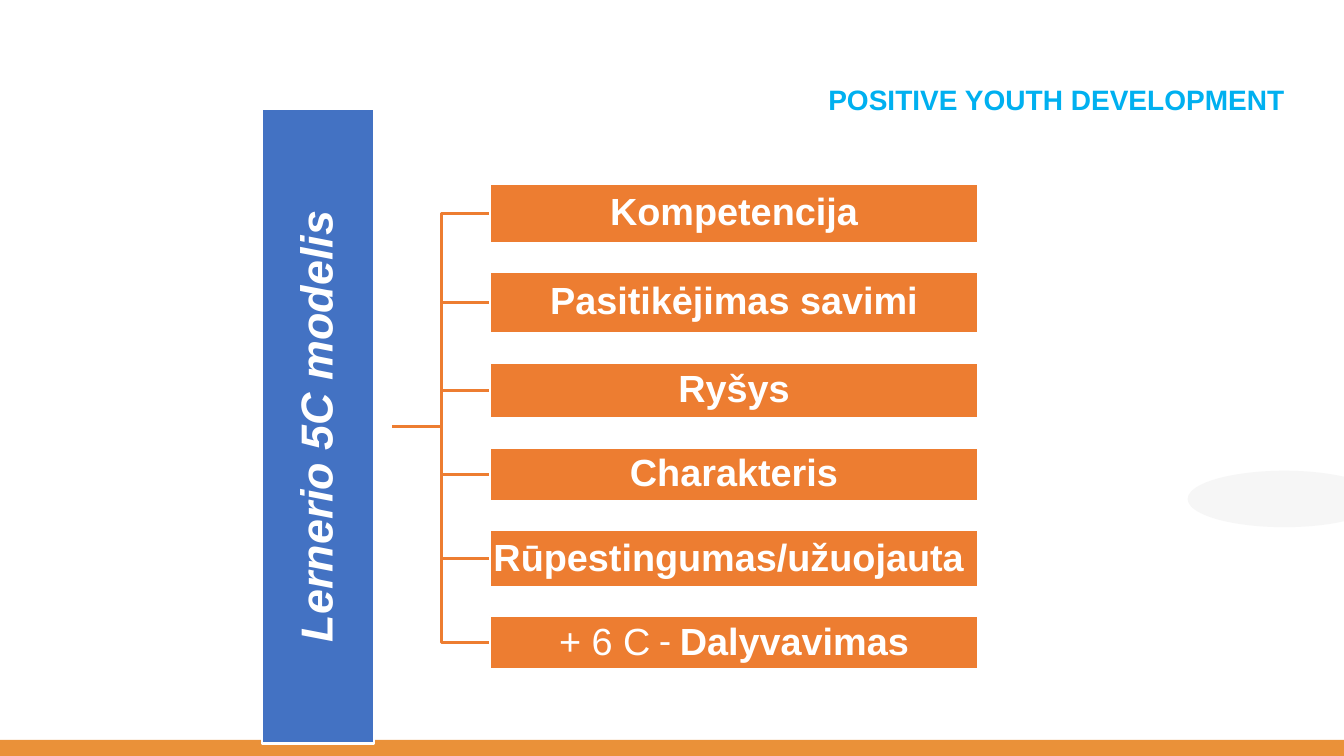
from lxml.etree import SubElement
from pptx import Presentation
from pptx.dml.color import RGBColor
from pptx.enum.shapes import MSO_CONNECTOR, MSO_SHAPE
from pptx.enum.text import MSO_ANCHOR, MSO_AUTO_SIZE, PP_ALIGN
from pptx.oxml.ns import qn
from pptx.util import Inches, Pt

COLOURS = {
    "white": "FFFFFF",
    "sky": "00B0F0",
    "blue": "4372C3",
    "orange": "ED7D31",
    "footer": "EA9139",
    "mist": "F5F5F5",
}

QUALITIES = [
    (7.87, [("Kompetencija", "Arial", True)]),
    (8.27, [("Pasitikėjimas savimi", "Arial", True)]),
    (7.47, [("Ryšys", "Arial", True)]),
    (7.2, [("Charakteris", "Arial", True)]),
    (7.6, [("Rūpestingumas/užuojauta ", "Arial", True)]),
    (7.07, [("+ 6 C", "Arial", False), (" - ", "Roboto", False), ("Dalyvavimas", "Arial", True)]),
]
QUALITY_LEFT, QUALITY_WIDTH = 36.46, 36.31
QUALITY_TOP, QUALITY_GAP = 24.27, 3.76
TRUNK_COLUMN, TRUNK_ROW = 29.18, 56.4


class SlideBuilder:
    def __init__(self, deck):
        self.column = deck.slide_width / 100
        self.row = deck.slide_height / 100
        self.slide = deck.slides.add_slide(deck.slide_layouts[5])

    def frame(self, left, top, width, height):
        return (round(left * self.column), round(top * self.row),
                round(width * self.column), round(height * self.row))

    def colour(self, name):
        return RGBColor.from_string(COLOURS[name])

    def set_text(self, shape, spans, size, colour, align, anchor, insets, italic=None):
        text_frame = shape.text_frame
        text_frame.word_wrap = True
        text_frame.auto_size = MSO_AUTO_SIZE.NONE
        text_frame.vertical_anchor = anchor
        text_frame.margin_left = text_frame.margin_right = Inches(insets[0])
        text_frame.margin_top = text_frame.margin_bottom = Inches(insets[1])
        para = text_frame.paragraphs[0]
        para.alignment = align
        para.line_spacing = 0.9
        para.space_before = Pt(0)
        para.font.size = Pt(size)
        para.font.color.rgb = self.colour(colour)
        para.font.italic = italic
        if len(spans) == 1:
            para.font.name, para.font.bold = spans[0][1:]
        for words, font, bold in spans:
            span = para.add_run()
            span.text = words
            if len(spans) > 1:
                span.font.name, span.font.bold = font, bold

    def title(self, words, *area):
        title = self.slide.shapes.title
        title.left, title.top, title.width, title.height = self.frame(*area)
        self.set_text(title, [(words, "Arial", True)], 20, "sky", PP_ALIGN.RIGHT, MSO_ANCHOR.TOP, (0.1, 0.05))

    def shape(self, kind, fill, *area, opacity=None):
        shape = self.slide.shapes.add_shape(kind, *self.frame(*area))
        shape.shadow.inherit = False
        shape.fill.solid()
        shape.fill.fore_color.rgb = self.colour(fill)
        shape.line.fill.background()
        if opacity:
            tint = next(shape._element.spPr.iter(qn("a:srgbClr")))
            SubElement(tint, qn("a:alpha"), val=str(opacity * 1000))
        return shape

    def box(self, spans, size, fill, *area, upright=False):
        box = self.shape(MSO_SHAPE.RECTANGLE, fill, *area)
        box.line.color.rgb = self.colour("white")
        box.line.width = Pt(2)
        if upright:
            left, top, width, height = self.frame(*area)
            box.left, box.top = left + (width - height) // 2, top + (height - width) // 2
            box.width, box.height = height, width
            box.rotation = 270
        self.set_text(box, spans, size, "white", PP_ALIGN.CENTER, MSO_ANCHOR.MIDDLE, (0.02, 0.02),
                      italic=upright or None)

    def branch(self, start_column, start_row, end_column, end_row):
        start = self.frame(start_column, start_row, 0, 0)[:2]
        end = self.frame(end_column, end_row, 0, 0)[:2]
        branch = self.slide.shapes.add_connector(MSO_CONNECTOR.ELBOW, *start, *end)
        branch.line.color.rgb = self.colour("orange")
        branch.line.width = Pt(2)
        SubElement(branch._element.spPr, qn("a:effectLst"))


def main():
    deck = Presentation()
    deck.slide_width, deck.slide_height = Inches(13.33), Inches(7.5)
    page = SlideBuilder(deck)
    page.title("POSITIVE YOUTH DEVELOPMENT", 25.06, 10.8, 71.27, 12.27)
    page.shape(MSO_SHAPE.OVAL, "mist", 88.37, 62.27, 14.4, 7.47, opacity=88)
    page.shape(MSO_SHAPE.RECTANGLE, "footer", 0, 97.87, 100, 2.13)
    page.box([("Lernerio 5C modelis", "Arial", True)], 32, "blue", 19.5, 14.4, 8.33, 84, upright=True)

    top = QUALITY_TOP
    for height, spans in QUALITIES:
        page.branch(TRUNK_COLUMN, TRUNK_ROW, QUALITY_LEFT, top + height / 2)
        page.box(spans, 27, "orange", QUALITY_LEFT, top, QUALITY_WIDTH, height)
        top += height + QUALITY_GAP
    deck.save("out.pptx")


if __name__ == "__main__":
    main()
